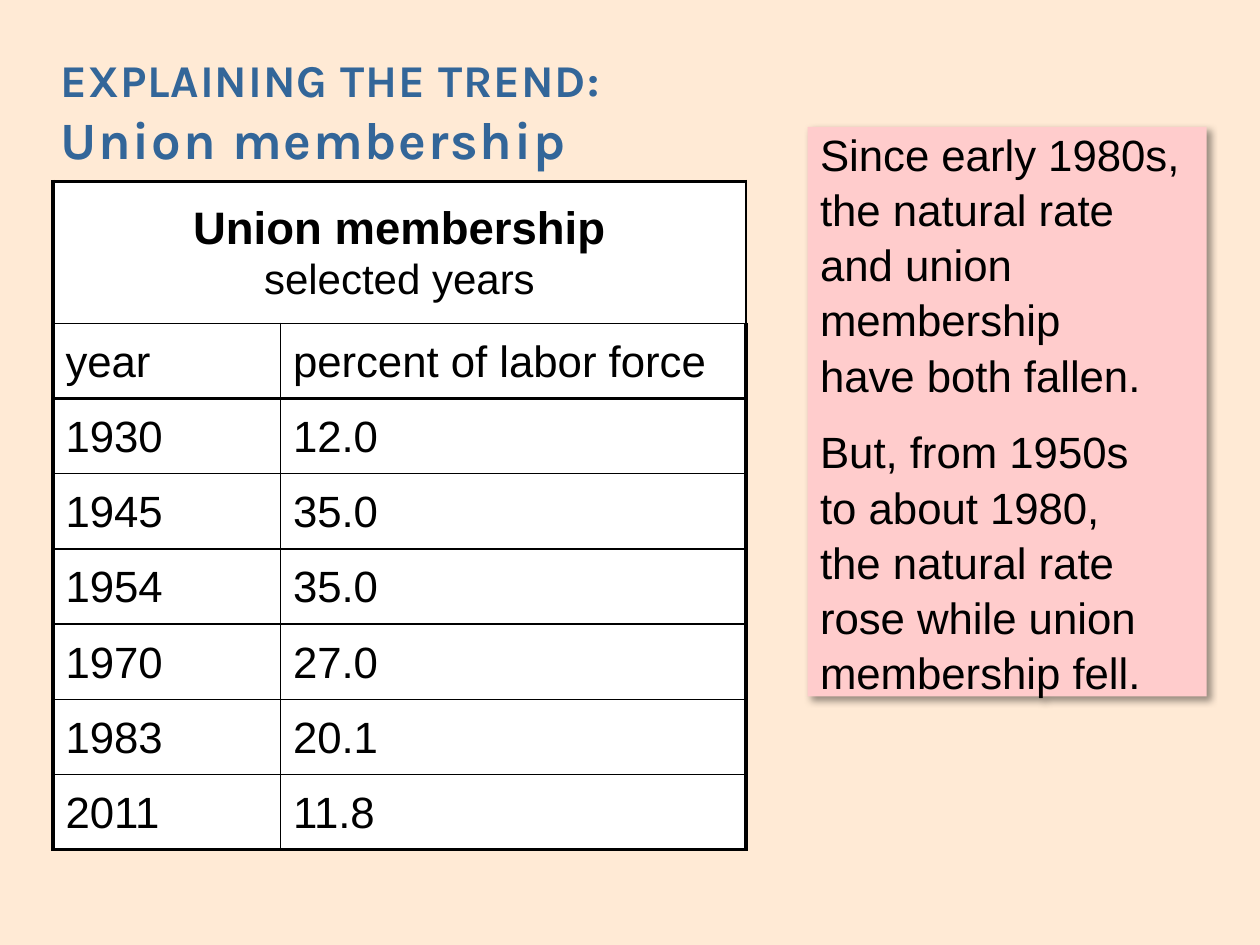
from lxml import etree
from pptx import Presentation
from pptx.dml.color import RGBColor
from pptx.enum import shapes, text
from pptx.oxml import ns
from pptx.util import Pt

COLORS = {"background": "FFEAD5", "title": "336699", "note": "FFCCCC",
          "cell": "FFFFFF", "ink": "000000"}


def style(font, size, color, name="Arial", bold=False):
    font.name = name
    font.size = Pt(size)
    font.bold = bold
    font.color.rgb = RGBColor.from_string(COLORS[color])


def add_element(parent, tag, **attributes):
    element = etree.SubElement(parent, ns.qn(tag))
    for key, value in attributes.items():
        element.set(key, str(value))
    return element


presentation = Presentation()
presentation.slide_width = Pt(720)
presentation.slide_height = Pt(540)
slide = presentation.slides.add_slide(presentation.slide_layouts[5])
slide.background.fill.solid()
slide.background.fill.fore_color.rgb = RGBColor.from_string(COLORS["background"])

title = slide.shapes.title
title.left, title.top, title.width, title.height = Pt(34.6), Pt(15), Pt(634), Pt(97)
frame = title.text_frame
frame.margin_left = frame.margin_top = frame.margin_right = frame.margin_bottom = 0
frame.vertical_anchor = text.MSO_ANCHOR.MIDDLE
frame.word_wrap = True
frame.auto_size = text.MSO_AUTO_SIZE.NONE
paragraph = frame.paragraphs[0]
paragraph.alignment = text.PP_ALIGN.LEFT
for line, size, spacing in (("EXPLAINING THE TREND:", 26, 50), ("Union membership", 30, 100)):
    if paragraph.runs:
        paragraph.add_line_break()
    run = paragraph.add_run()
    run.text = line
    style(run.font, size, "title", "Karla", True)
    run.font._element.set("spc", str(spacing))

note = slide.shapes.add_shape(shapes.MSO_SHAPE.RECTANGLE, Pt(461.5), Pt(72.5), Pt(228), Pt(325.5))
note.fill.solid()
note.fill.fore_color.rgb = RGBColor.from_string(COLORS["note"])
note.line.fill.background()
note.shadow.inherit = False
effects = note._element.spPr.find(ns.qn("a:effectLst"))
shadow = add_element(effects, "a:outerShdw", blurRad=Pt(4), dist=Pt(3), dir=45 * 60000,
                     algn="tl", rotWithShape=0)
shadow_color = add_element(shadow, "a:srgbClr", val=COLORS["ink"])
add_element(shadow_color, "a:alpha", val=40000)
frame = note.text_frame
frame.word_wrap = True
frame.vertical_anchor = text.MSO_ANCHOR.MIDDLE
statements = ("Since early 1980s, the natural rate and union membership\vhave both fallen.",
              "But, from 1950s\vto about 1980,\vthe natural rate rose while union membership fell.")
for index, statement in enumerate(statements):
    paragraph = frame.add_paragraph() if index else frame.paragraphs[0]
    paragraph.text = statement
    paragraph.alignment = text.PP_ALIGN.LEFT
    paragraph.line_spacing = 1.05
    paragraph.space_before = Pt(12.5 * index)
    style(paragraph.font, 25, "ink")

rows = [("", ""), ("year", "percent of labor force"), ("1930", "12.0"), ("1945", "35.0"),
        ("1954", "35.0"), ("1970", "27.0"), ("1983", "20.1"), ("2011", "11.8")]
last = len(rows) - 1
table = slide.shapes.add_table(len(rows), 2, Pt(30.25), Pt(103.75), Pt(396), Pt(382)).table
table.first_row = False
table.horz_banding = False
table.columns[0].width = Pt(130)
table.columns[1].width = Pt(266)
for row_index, values in enumerate(rows):
    table.rows[row_index].height = Pt(43 if row_index else 81)
    for column_index, value in enumerate(values):
        cell = table.cell(row_index, column_index)
        cell.vertical_anchor = text.MSO_ANCHOR.MIDDLE
        paragraph = cell.text_frame.paragraphs[0]
        paragraph.line_spacing = 1.05
        if value:
            paragraph.text = value
            style(paragraph.font, 25, "ink")
        thick_sides = {"a:lnL": column_index == 0, "a:lnR": column_index == 1,
                       "a:lnT": row_index in (0, 2), "a:lnB": row_index in (1, last)}
        properties = cell._tc.get_or_add_tcPr()
        for side, thick in thick_sides.items():
            border = add_element(properties, side, w=Pt(2.25 if thick else 1))
            border_fill = add_element(border, "a:solidFill")
            add_element(border_fill, "a:srgbClr", val=COLORS["ink"])
        cell.fill.solid()
        cell.fill.fore_color.rgb = RGBColor.from_string(COLORS["cell"])

heading = table.cell(0, 0)
heading.merge(table.cell(0, 1))
paragraph = heading.text_frame.paragraphs[0]
paragraph.alignment = text.PP_ALIGN.CENTER
for line, size, bold in (("Union membership", 26, True), ("selected years", 24, False)):
    if paragraph.runs:
        paragraph.add_line_break()
    run = paragraph.add_run()
    run.text = line
    style(run.font, size, "ink", bold=bold)

presentation.save("out.pptx")
